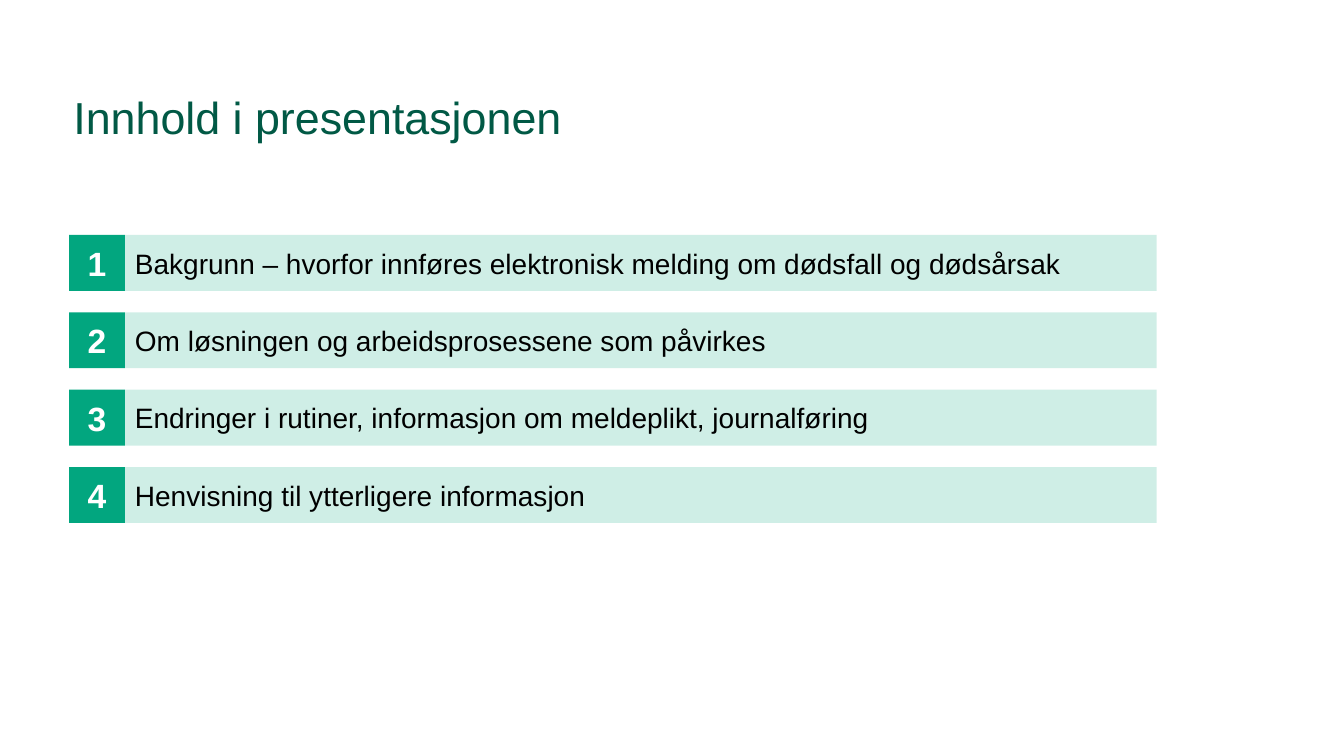
import pptx
import pptx.util
import pptx.dml.color
import pptx.enum.shapes
import pptx.enum.text
import lxml.etree

Cm = pptx.util.Cm
ANCHOR = pptx.enum.text.MSO_ANCHOR
ALIGN = pptx.enum.text.PP_ALIGN
GREEN = "02A67F"


def rgb(value):
    return pptx.dml.color.RGBColor.from_string(value)


def write(sp, text, color, align, **font):
    tf = sp.text_frame
    tf.word_wrap = True
    tf.vertical_anchor = ANCHOR.MIDDLE
    p = tf.paragraphs[0]
    p.alignment = align
    r = p.add_run()
    r.text = text
    r.font.color.rgb = rgb(color)
    for name, value in {"name": "Arial", **font}.items():
        setattr(r.font, name, value)


prs = pptx.Presentation()
prs.slide_width, prs.slide_height = Cm(33.87), Cm(19.05)
s = prs.slides.add_slide(prs.slide_layouts[5])

# Title
title = s.shapes.title
title.left, title.top, title.width, title.height = Cm(1.75), Cm(2.16), Cm(31.19), Cm(1.57)
for side, inset in {"left": 0.1, "top": 0, "right": 0, "bottom": 0}.items():
    setattr(title.text_frame, "margin_" + side, Cm(inset))
write(title, "Innhold i presentasjonen", "015945", ALIGN.LEFT, size=pptx.util.Pt(32))

# Agenda: a numbered square and a pale bar in each row
topics = [
    "Bakgrunn – hvorfor innføres elektronisk melding om dødsfall og dødsårsak",
    "Om løsningen og arbeidsprosessene som påvirkes",
    "Endringer i rutiner, informasjon om meldeplikt, journalføring",
    "Henvisning til ytterligere informasjon",
]
left, top, side, bar_width, pitch = 1.74, 5.92, 1.41, 26.0, 1.95

for i, topic in enumerate(topics):
    y = top + i * pitch
    cells = [
        (left, side, 100, str(i + 1), "FFFFFF", ALIGN.CENTER, 24, True),
        (left + side, bar_width, 19, topic, "000000", ALIGN.LEFT, 20, False),
    ]
    for x, width, opacity, text, color, align, size, bold in cells:
        sp = s.shapes.add_shape(pptx.enum.shapes.MSO_SHAPE.RECTANGLE,
                                Cm(x), Cm(y), Cm(width), Cm(side))
        sp.shadow.inherit = False
        sp.line.fill.background()
        sp.fill.solid()
        sp.fill.fore_color.rgb = rgb(GREEN)
        if opacity < 100:
            fill_color = sp.fill._xPr.find(".//" + pptx.oxml.ns.qn("a:srgbClr"))
            lxml.etree.SubElement(fill_color, pptx.oxml.ns.qn("a:alpha"),
                                  val=str(opacity * 1000))
        write(sp, text, color, align, size=pptx.util.Pt(size), bold=bold)

prs.save("out.pptx")
